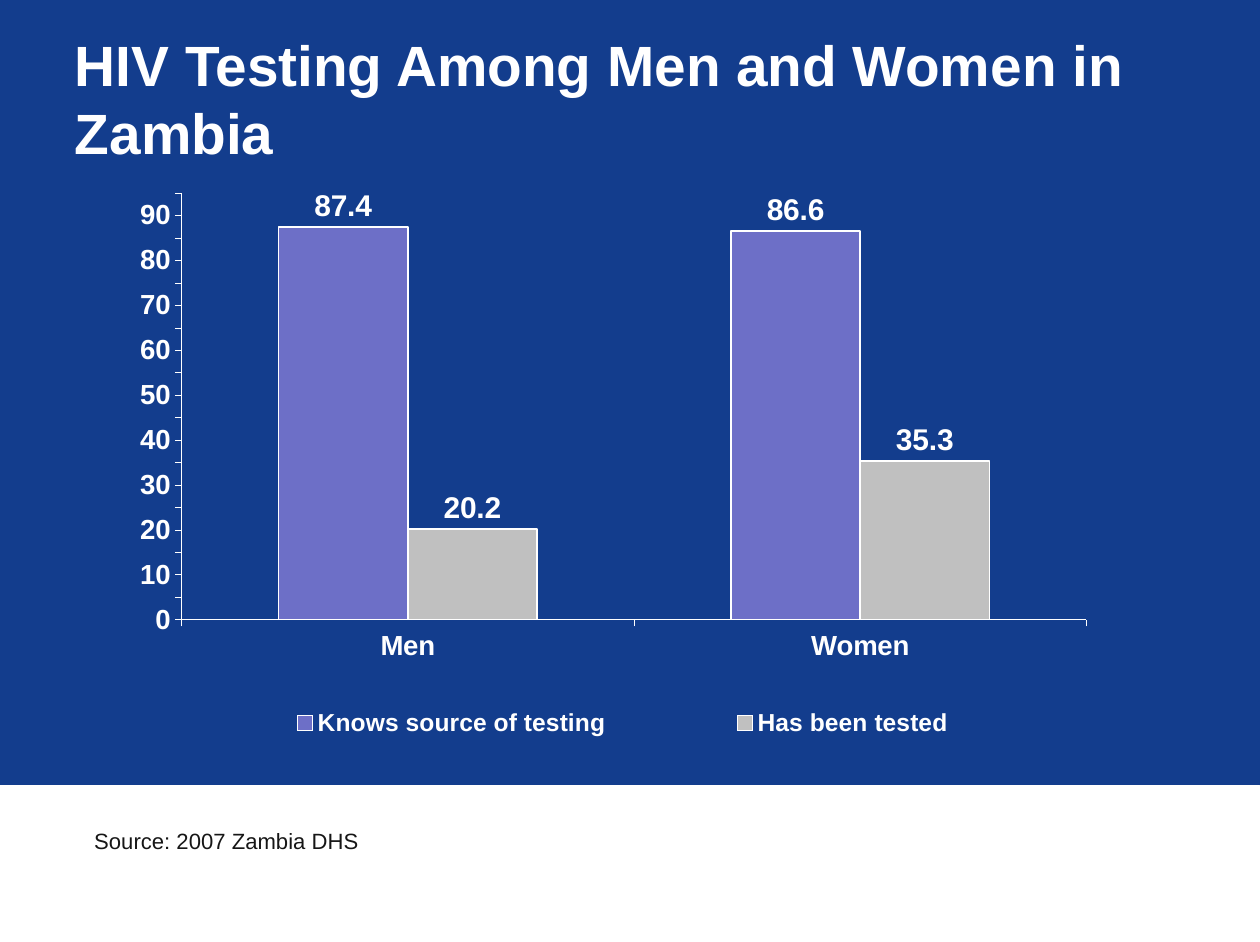
from lxml.etree import SubElement
from pptx import Presentation
from pptx.chart.data import CategoryChartData
from pptx.dml.color import RGBColor
from pptx.enum.chart import XL_CHART_TYPE, XL_LABEL_POSITION, XL_LEGEND_POSITION, XL_TICK_MARK
from pptx.enum.shapes import MSO_SHAPE
from pptx.enum.text import MSO_ANCHOR
from pptx.oxml.ns import qn
from pptx.util import Pt

PX = 9144  # 100 px to the inch
WIDTH, HEIGHT = 1110, 830
FONT = "Arial"
NAVY = RGBColor(0x13, 0x3D, 0x8D)
WHITE = RGBColor(0xFF, 0xFF, 0xFF)
INK = RGBColor(0x16, 0x16, 0x16)
VIOLET = RGBColor(0x6D, 0x6F, 0xC7)
SILVER = RGBColor(0xC0, 0xC0, 0xC0)

GROUPS = ["Men", "Women"]
SERIES = [
    ("Knows source of testing", (87.4, 86.6), VIOLET),
    ("Has been tested", (20.2, 35.3), SILVER),
]


def scaled(box):
    return [length * PX for length in box]


def style_font(font, size, color=WHITE, bold=True):
    font.name = FONT
    font.size = Pt(size)
    font.bold = bold
    font.color.rgb = color


def style_line(line, width):
    line.color.rgb = WHITE
    line.width = Pt(width)


def add_text(page, box, text, anchor=MSO_ANCHOR.TOP, **font_format):
    frame = page.shapes.add_textbox(*scaled(box)).text_frame
    frame.word_wrap = True
    frame.vertical_anchor = anchor
    frame.margin_left = frame.margin_right = 11 * PX
    frame.margin_top = frame.margin_bottom = 6 * PX
    para = frame.paragraphs[0]
    span = para.add_run()
    span.text = text
    style_font(span.font, **font_format)


def set_layout(parent, x, y, w, h, inner=False):
    """Fix a chart part's place as fractions of the chart's box."""
    layout = parent.find(qn("c:layout"))
    if layout is None:
        layout = SubElement(parent, qn("c:layout"))
        before = parent.find(qn("c:legendPos"))
        if before is None:
            parent.insert(0, layout)
        else:
            before.addnext(layout)
    manual = SubElement(layout, qn("c:manualLayout"))
    settings = [("layoutTarget", "inner")] if inner else []
    settings += [("xMode", "edge"), ("yMode", "edge"), ("x", x), ("y", y), ("w", w), ("h", h)]
    for name, value in settings:
        SubElement(manual, qn(f"c:{name}")).set("val", str(value))


def style_axes(chart):
    for axis in (chart.category_axis, chart.value_axis):
        axis.has_major_gridlines = False
        axis.major_tick_mark = XL_TICK_MARK.OUTSIDE
        axis.minor_tick_mark = XL_TICK_MARK.NONE
        style_font(axis.tick_labels.font, 17.5)
        style_line(axis.format.line, 0.25)
    scale = chart.value_axis
    scale.minimum_scale, scale.maximum_scale, scale.major_unit = 0, 95, 5
    scale.tick_labels.number_format = "0"
    scale.tick_labels.number_format_is_linked = False


def style_columns(plot):
    plot.vary_by_categories = False
    plot.gap_width, plot.overlap = 150, 0
    for series, (_, _, color) in zip(plot.series, SERIES):
        series.format.fill.solid()
        series.format.fill.fore_color.rgb = color
        style_line(series.format.line, 1.06)
        labels = series.data_labels
        labels.show_value = True
        labels.position = XL_LABEL_POSITION.OUTSIDE_END
        style_font(labels.font, 19)


def add_testing_chart(page, box):
    data = CategoryChartData()
    data.categories = GROUPS
    for name, values, _ in SERIES:
        data.add_series(name, values)
    chart = page.shapes.add_chart(XL_CHART_TYPE.COLUMN_CLUSTERED, *scaled(box), data).chart
    chart.has_title = False
    style_font(chart.font, 19)
    style_axes(chart)
    style_columns(chart.plots[0])
    chart.has_legend = True
    legend = chart.legend
    legend.position = XL_LEGEND_POSITION.BOTTOM
    legend.include_in_layout = False
    style_font(legend.font, 15.6)
    plot_area = chart.element.find(qn("c:chart")).find(qn("c:plotArea"))
    set_layout(plot_area, 0.067, 0.043, 0.847, 0.73, inner=True)
    set_layout(plot_area.getparent().find(qn("c:legend")), 0.06, 0.91, 0.84, 0.08)


def add_source_band(page, box):
    left, top, width, _ = box
    band = page.shapes.add_shape(MSO_SHAPE.RECTANGLE, *scaled(box))
    band.shadow.inherit = False
    band.fill.solid()
    band.fill.fore_color.rgb = WHITE
    style_line(band.line, 0.75)
    add_text(page, (left + 72, top + 31, width - 222, 35), "Source: 2007 Zambia DHS",
             size=14, color=INK, bold=False)


def main():
    deck = Presentation()
    deck.slide_width, deck.slide_height = scaled((WIDTH, HEIGHT))
    page = deck.slides.add_slide(deck.slide_layouts[6])
    page.background.fill.solid()
    page.background.fill.fore_color.rgb = NAVY
    add_source_band(page, (0, 692, WIDTH, HEIGHT - 692))
    add_text(page, (55, 33, 1017, 107), "HIV Testing Among Men and Women in Zambia",
             anchor=MSO_ANCHOR.MIDDLE, size=36)
    add_testing_chart(page, (97, 148, 941, 515))
    deck.save("out.pptx")


if __name__ == "__main__":
    main()
